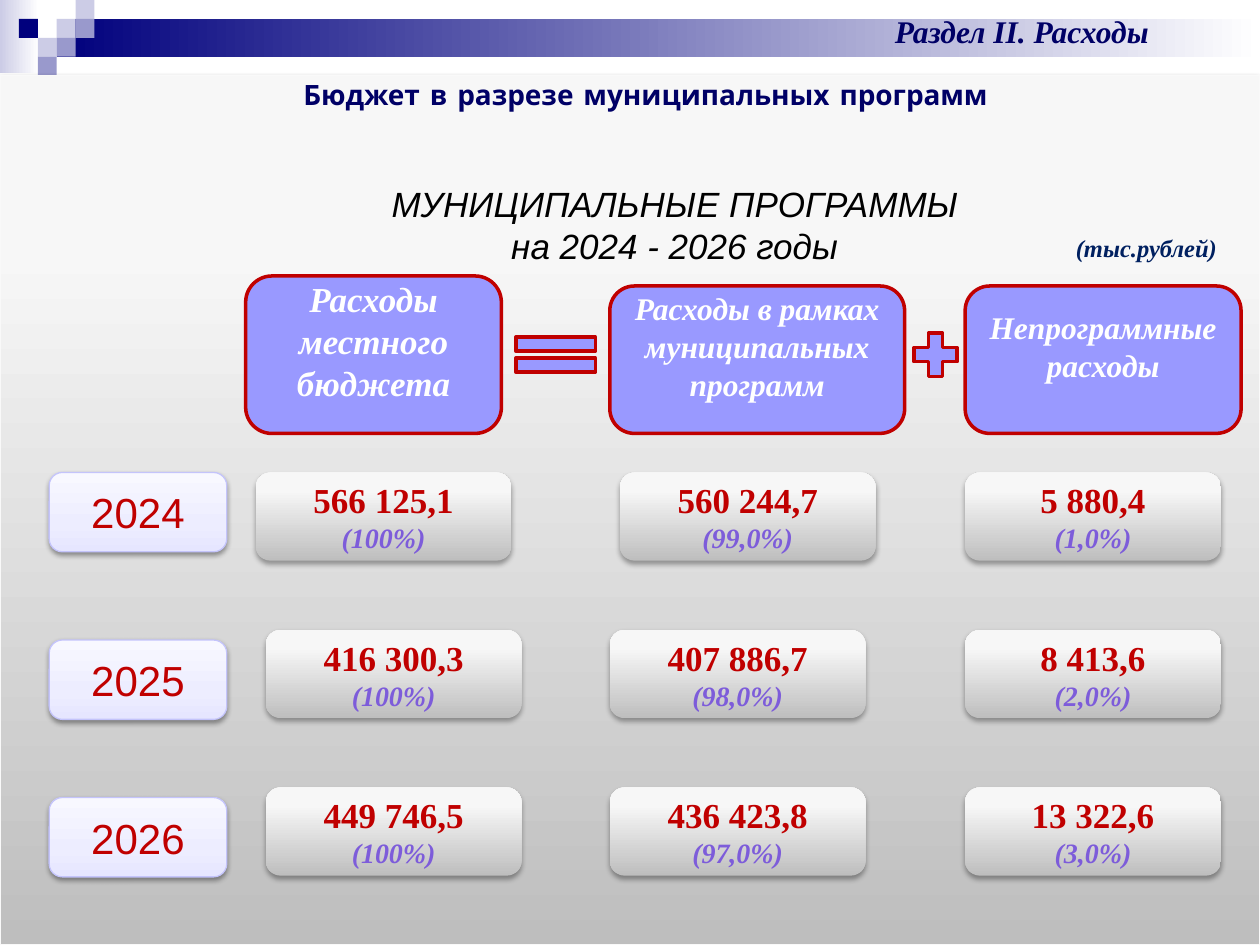
from dataclasses import dataclass
from typing import Optional

from lxml.etree import SubElement
from pptx import Presentation
from pptx.dml.color import RGBColor
from pptx.enum.shapes import MSO_SHAPE as SHAPE
from pptx.enum.text import MSO_ANCHOR as ANCHOR, PP_ALIGN as ALIGN
from pptx.oxml.ns import qn
from pptx.util import Inches, Pt

SERIF = "Times New Roman"
RED, NAVY, LILAC = "C00000", "000066", "9999FF"
PALE, MID, DARK = "CCCCE6", "9999CC", "00007D"
GREY = ((0, "BEBEBE"), (80, "F7F7F7"), (100, "F8F8F8"))
LAVENDER = ((0, "E6E6FF"), (35, "EDEDFF"), (100, "F8F8FF"))


@dataclass
class Box:
    left: float
    top: float
    width: float
    height: float


@dataclass
class Style:
    size: float
    color: str
    font: str = SERIF
    bold: bool = False
    italic: bool = False


@dataclass
class Header:
    box: Box
    text: str
    size: float


@dataclass
class Year:
    name: str
    top: float
    label_top: float
    lefts: tuple
    amounts: tuple
    shares: tuple


def rgb(value: str) -> RGBColor:
    return RGBColor.from_string(value)


def place(box: Box) -> tuple:
    return tuple(Inches(v) for v in (box.left, box.top, box.width, box.height))


def set_gradient(sp, stops: tuple, angle: float) -> None:
    sp.fill.gradient()
    sp.fill.gradient_angle = angle
    gs_list = sp._element.spPr.find(qn("a:gradFill")).find(qn("a:gsLst"))
    for old in list(gs_list):
        gs_list.remove(old)
    for pos, color in stops:
        gs = SubElement(gs_list, qn("a:gs"), pos=str(pos * 1000))
        SubElement(gs, qn("a:srgbClr"), val=color)


def set_shadow(sp, alpha: int, blur: float, dist: float) -> None:
    effects = sp._element.spPr.find(qn("a:effectLst"))
    shadow = SubElement(effects, qn("a:outerShdw"), blurRad=str(Pt(blur)),
                        dist=str(Pt(dist)), dir="5400000", rotWithShape="0")
    color = SubElement(shadow, qn("a:srgbClr"), val="000000")
    SubElement(color, qn("a:alpha"), val=str(alpha * 1000))


def add_shape(s, kind, box: Box, fill, angle: float = 90,
              line: Optional[str] = None, weight: float = 0.75):
    sp = s.shapes.add_shape(kind, *place(box))
    sp.shadow.inherit = False
    if isinstance(fill, str):
        sp.fill.solid()
        sp.fill.fore_color.rgb = rgb(fill)
    else:
        set_gradient(sp, fill, angle)
    if line:
        sp.line.color.rgb = rgb(line)
        sp.line.width = Pt(weight)
    else:
        sp.line.fill.background()
    return sp


def write(sp, lines: list, align=ALIGN.CENTER, anchor=ANCHOR.MIDDLE,
          wrap: bool = True) -> None:
    tf = sp.text_frame
    tf.text = "\n".join(text for text, _ in lines)
    tf.word_wrap = wrap
    tf.vertical_anchor = anchor
    for p, (_, style) in zip(tf.paragraphs, lines):
        p.alignment = align
        for r in p.runs:
            r.font.name = style.font
            r.font.size = Pt(style.size)
            r.font.bold = style.bold
            r.font.italic = style.italic
            r.font.color.rgb = rgb(style.color)


def add_text(s, box: Box, lines: list, **options):
    sp = s.shapes.add_textbox(*place(box))
    write(sp, lines, **options)
    return sp


def add_banner(s) -> None:
    add_shape(s, SHAPE.RECTANGLE, Box(0, 0, 0.31, 0.58),
              ((0, PALE), (100, "FFFFFF")), 0)
    add_shape(s, SHAPE.RECTANGLE, Box(0.45, 0.15, 9.55, 0.3),
              ((0, DARK), (100, "FFFFFF")), 0)
    squares = ((3, 1, PALE), (4, 0, PALE), (4, 1, MID), (2, 2, PALE),
               (1, 1, DARK), (3, 2, MID), (2, 3, MID))
    side = 0.15
    for col, row, color in squares:
        add_shape(s, SHAPE.RECTANGLE,
                  Box(col * side, row * side, side, side), color)


def add_header(s, header: Header) -> None:
    sp = add_shape(s, SHAPE.ROUNDED_RECTANGLE, header.box, LILAC,
                   line=RED, weight=2)
    write(sp, [(header.text, Style(header.size, "FFFFFF", bold=True, italic=True))])
    sp.text_frame.margin_top = 0
    sp.text_frame.margin_bottom = Inches(0.22)


def add_year(s, year: Year) -> None:
    label = add_shape(s, SHAPE.ROUNDED_RECTANGLE,
                      Box(0.39, year.label_top, 1.41, 0.63), LAVENDER, line="C4C4FB")
    set_shadow(label, 38, 3.1, 1.6)
    write(label, [(year.name, Style(24, RED, "Arial"))])
    for left, amount, share in zip(year.lefts, year.amounts, year.shares):
        card = add_shape(s, SHAPE.ROUNDED_RECTANGLE,
                         Box(left, year.top, 2.03, 0.7), GREY)
        set_shadow(card, 35, 3.1, 1.8)
        write(card, [(amount, Style(20, RED, bold=True)),
                     (share, Style(16, "7D5CDA", bold=True, italic=True))])


HEADERS = (
    Header(Box(7.66, 2.27, 2.19, 1.17), "Непрограммные расходы", 18),
    Header(Box(4.84, 2.27, 2.34, 1.17), "Расходы в рамках муниципальных программ", 18),
    Header(Box(1.95, 2.19, 2.03, 1.25), "Расходы местного бюджета", 20),
)
YEARS = (
    Year("2024", 3.75, 3.75, (2.03, 4.92, 7.66),
         ("566 125,1", "560 244,7", "5 880,4"), ("(100%)", "(99,0%)", "(1,0%)")),
    Year("2025", 5, 5.08, (2.11, 4.84, 7.66),
         ("416 300,3", "407 886,7", "8 413,6"), ("(100%)", "(98,0%)", "(2,0%)")),
    Year("2026", 6.25, 6.33, (2.11, 4.84, 7.66),
         ("449 746,5", "436 423,8", "13 322,6"), ("(100%)", "(97,0%)", "(3,0%)")),
)


def main() -> None:
    prs = Presentation()
    prs.slide_width, prs.slide_height = Inches(10), Inches(7.5)
    s = prs.slides.add_slide(prs.slide_layouts[6])
    add_banner(s)
    panel = add_shape(s, SHAPE.FLOWCHART_PROCESS, Box(0, 0.6, 10, 6.9), GREY,
                      line="F9F9F9")
    set_shadow(panel, 35, 3.1, 1.8)

    for header in HEADERS:
        add_header(s, header)
    for kind, box in ((SHAPE.MATH_EQUAL, Box(3.98, 2.58, 0.86, 0.47)),
                      (SHAPE.MATH_PLUS, Box(7.19, 2.58, 0.47, 0.47))):
        add_shape(s, kind, box, LILAC, line=RED, weight=2)
    for year in YEARS:
        add_year(s, year)

    heading = Style(20, "000000", "Arial", italic=True)
    title = add_text(s, Box(0.84, 1.39, 8.53, 1.08),
                     [("МУНИЦИПАЛЬНЫЕ ПРОГРАММЫ", heading),
                      ("на 2024 - 2026 годы", heading)])
    title.text_frame.margin_left = Inches(0.6)
    title.text_frame.margin_bottom = Inches(0.34)
    add_text(s, Box(8.44, 1.8, 1.33, 0.34),
             [("(тыс.рублей)", Style(14, "002060", bold=True, italic=True))],
             align=ALIGN.LEFT, anchor=ANCHOR.TOP, wrap=False)
    add_text(s, Box(6.26, 0.05, 3.7, 0.4),
             [("Раздел II. Расходы", Style(18, NAVY, bold=True, italic=True))],
             anchor=ANCHOR.TOP)
    add_text(s, Box(0.88, 0.57, 8.49, 0.37),
             [("Бюджет в разрезе муниципальных программ",
               Style(16, NAVY, "Comic Neue", bold=True))], anchor=ANCHOR.TOP)
    prs.save("out.pptx")


if __name__ == "__main__":
    main()
